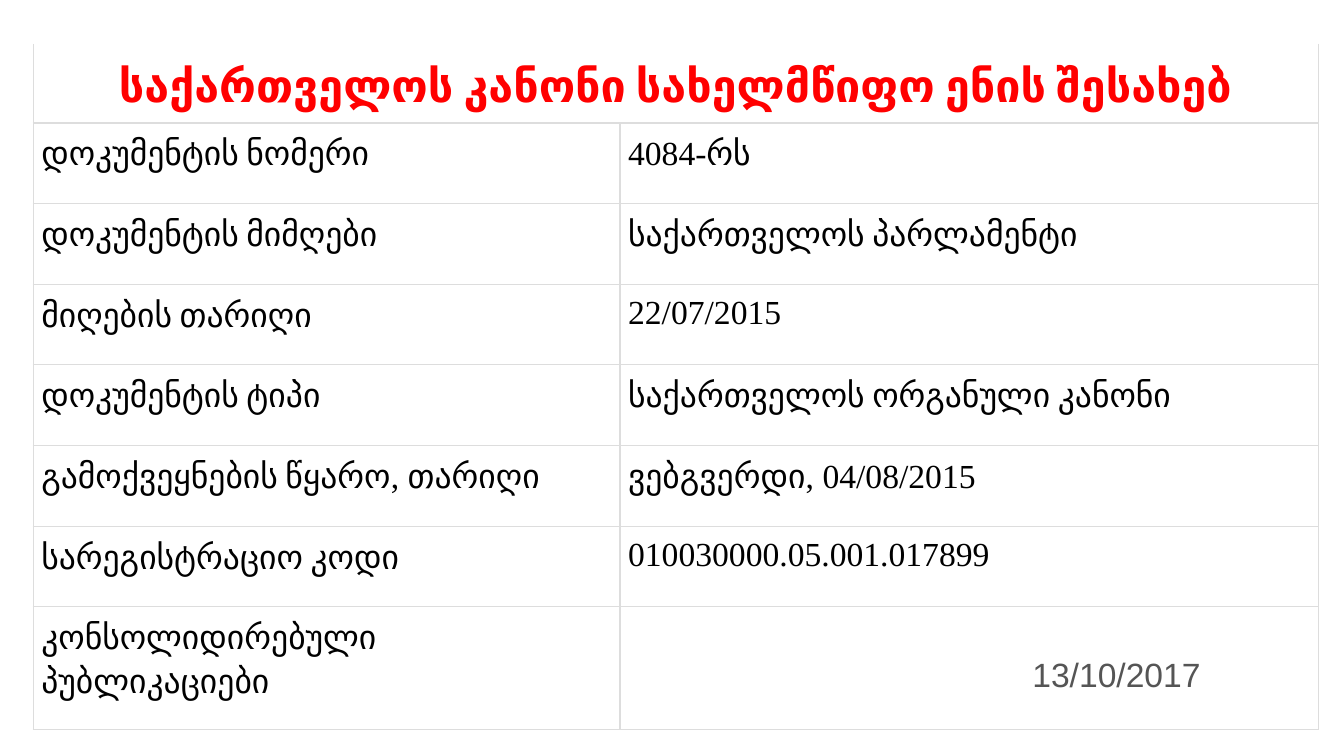
"""Build a slide with a table of facts about the state language law."""
from dataclasses import dataclass

from lxml.etree import SubElement
from pptx import Presentation
from pptx.dml.color import RGBColor
from pptx.enum.text import MSO_ANCHOR as Anchor, PP_ALIGN as Align
from pptx.oxml.ns import qn
from pptx.util import Inches, Pt


@dataclass(frozen=True)
class Theme:
    title_color: RGBColor = RGBColor(0xFF, 0, 0)
    text_color: RGBColor = RGBColor(0, 0, 0)
    date_color: RGBColor = RGBColor(0x55, 0x55, 0x55)
    border_color: str = "DDDDDD"
    title_size: Pt = Pt(32)
    text_size: Pt = Pt(24)
    georgian: str = "Calibri"
    latin: str = "Times New Roman"
    date: str = "Arial"


theme = Theme()


def set_borders(cell, **widths):
    properties = cell._tc.get_or_add_tcPr()
    for side, width in widths.items():
        line = SubElement(properties, qn(f"a:ln{side}"), w=str(Pt(width)))
        fill = SubElement(line, qn("a:solidFill"))
        SubElement(fill, qn("a:srgbClr"), val=theme.border_color)


def write(cell, runs, size, color):
    cell.fill.background()
    cell.margin_left = cell.margin_right = Inches(0.08)
    cell.margin_top = cell.margin_bottom = Inches(0.08)
    paragraph = cell.text_frame.paragraphs[0]
    paragraph.line_spacing = 1.07
    paragraph.font.size = size
    paragraph.font.color.rgb = color
    for text, font_name in runs:
        run = paragraph.add_run()
        run.text = text
        run.font.name = font_name
    return paragraph


title = "საქართველოს კანონი სახელმწიფო ენის შესახებ"
facts = [
    ([("დოკუმენტის ნომერი", theme.georgian)],
     [("4084-", theme.latin), ("რს", theme.georgian)]),
    ([("დოკუმენტის მიმღები", theme.georgian)],
     [("საქართველოს პარლამენტი", theme.georgian)]),
    ([("მიღების თარიღი", theme.georgian)],
     [("22/07/2015", theme.latin)]),
    ([("დოკუმენტის ტიპი", theme.georgian)],
     [("საქართველოს ორგანული კანონი", theme.georgian)]),
    ([("გამოქვეყნების წყარო", theme.georgian), (", ", theme.latin),
      ("თარიღი", theme.georgian)],
     [("ვებგვერდი", theme.georgian), (", 04/08/2015", theme.latin)]),
    ([("სარეგისტრაციო კოდი", theme.georgian)],
     [("010030000.05.001.017899", theme.latin)]),
    ([("კონსოლიდირებული პუბლიკაციები", theme.georgian)],
     [("13/10/2017", theme.date)]),
]

presentation = Presentation()
presentation.slide_width = Inches(13.33)
presentation.slide_height = Inches(7.5)
slide = presentation.slides.add_slide(presentation.slide_layouts[6])

table = slide.shapes.add_table(
    len(facts) + 1, 2, Inches(0.33), Inches(0.44), Inches(12.75), Inches(6.81)).table
table.first_row = table.horz_banding = False
for column, width in zip(table.columns, (5.82, 6.93)):
    column.width = Inches(width)
for row, height in zip(table.rows, [0.78] + [0.8] * 6 + [1.22]):
    row.height = Inches(height)

title_cell = table.cell(0, 0)
title_cell.merge(table.cell(0, 1))
for cell in table.rows[0].cells:
    set_borders(cell, L=1, R=1, B=1.5)
    cell.fill.background()
heading = write(title_cell, [(title, theme.georgian)], theme.title_size, theme.title_color)
heading.alignment = Align.CENTER
heading.font.bold = True
title_cell.vertical_anchor = Anchor.BOTTOM

for row_number, fact in enumerate(facts, start=1):
    for column_number, runs in enumerate(fact):
        cell = table.cell(row_number, column_number)
        set_borders(cell, L=1, R=1, T=1.5 if row_number == 1 else 1, B=1)
        paragraph = write(cell, runs, theme.text_size, theme.text_color)

paragraph.font.color.rgb = theme.date_color
cell.margin_left = Inches(4.09)
cell.margin_top = Inches(0.47)

presentation.save("out.pptx")
